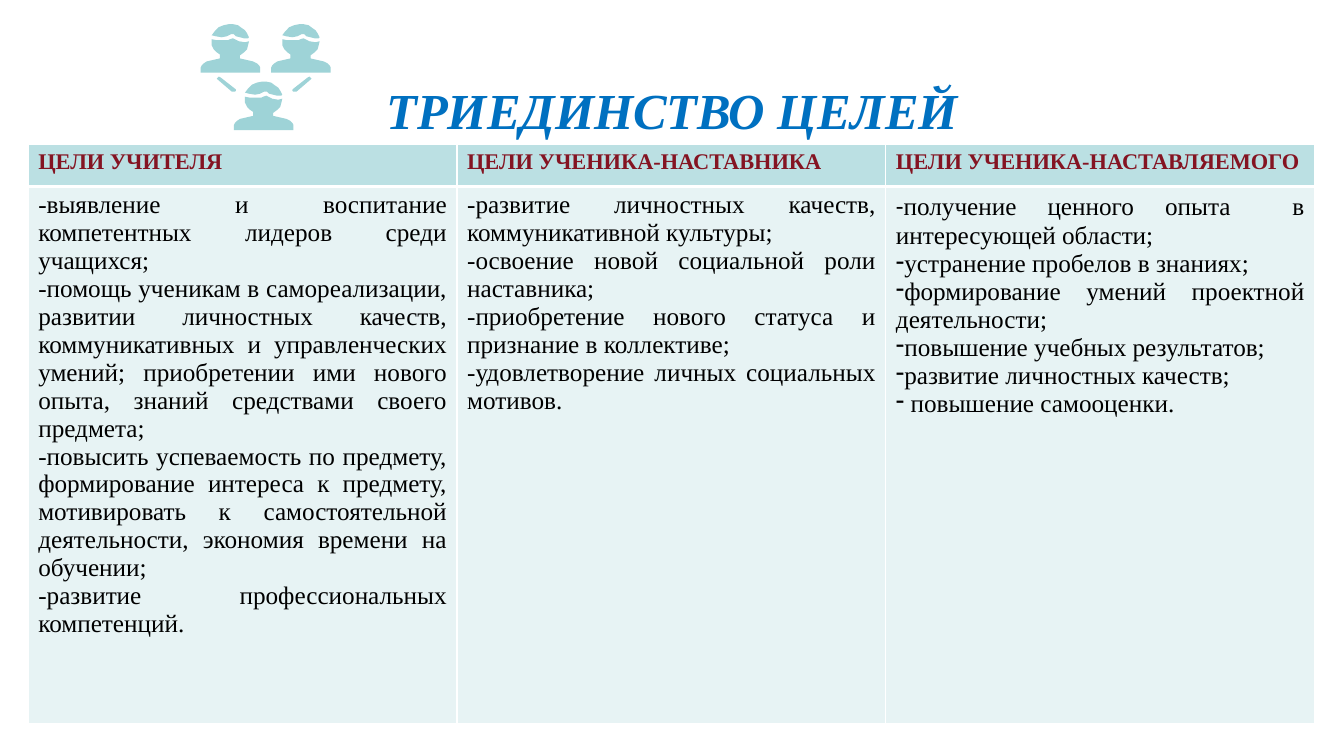
from lxml.etree import SubElement
from pptx import Presentation
from pptx.dml.color import RGBColor
from pptx.enum.text import MSO_ANCHOR, PP_ALIGN
from pptx.oxml.ns import qn
from pptx.util import Inches, Pt

TITLE = "ТРИЕДИНСТВО ЦЕЛЕЙ"
HEADS = ["ЦЕЛИ УЧИТЕЛЯ", "ЦЕЛИ УЧЕНИКА-НАСТАВНИКА", "ЦЕЛИ УЧЕНИКА-НАСТАВЛЯЕМОГО"]
GOALS = [
    [
        "-выявление и воспитание компетентных лидеров среди учащихся;",
        "-помощь ученикам в самореализации, развитии личностных качеств, "
        "коммуникативных и управленческих умений; приобретении ими нового "
        "опыта, знаний средствами своего предмета;",
        "-повысить успеваемость по предмету, формирование интереса к предмету, "
        "мотивировать к самостоятельной деятельности, экономия времени на обучении;",
        "-развитие профессиональных компетенций.",
    ],
    [
        "-развитие личностных качеств, коммуникативной культуры;",
        "-освоение новой социальной роли наставника;",
        "-приобретение нового статуса и признание в коллективе;",
        "-удовлетворение личных социальных мотивов.",
    ],
    [
        "получение ценного опыта  в интересующей области;",
        "устранение пробелов в знаниях;",
        "формирование умений проектной деятельности;",
        "повышение учебных результатов;",
        "развитие личностных качеств;",
        " повышение самооценки.",
    ],
]

BODY = [
    (2.58, 0.72), (2.58, 0.67), (2.57, 0.65), (2.55, 0.63), (2.51, 0.61),
    (2.38, 0.58), (2.38, 0.55), (2.42, 0.52), (2.45, 0.49), (2.46, 0.45),
    (2.47, 0.41), (2.43, 0.42), (2.37, 0.41), (2.33, 0.39), (2.31, 0.38),
    (2.28, 0.39), (2.26, 0.4), (2.2, 0.4), (2.15, 0.4), (2.1, 0.39),
    (2.1, 0.45), (2.12, 0.49), (2.15, 0.52), (2.18, 0.54), (2.18, 0.58),
    (2.05, 0.61), (2.02, 0.63), (2, 0.65), (1.99, 0.67), (1.99, 0.72),
]
HAIR = [
    (2.29, 0.34), (2.32, 0.34), (2.34, 0.36), (2.38, 0.37), (2.42, 0.38),
    (2.46, 0.38), (2.47, 0.37), (2.45, 0.33), (2.43, 0.3), (2.4, 0.28),
    (2.36, 0.25), (2.31, 0.24), (2.27, 0.24), (2.22, 0.25), (2.17, 0.27),
    (2.13, 0.31), (2.1, 0.35), (2.14, 0.36), (2.2, 0.37), (2.25, 0.36),
]
BAR = [
    (2.33, 0.91), (2.34, 0.9), (2.34, 0.89), (2.33, 0.88), (2.19, 0.77),
    (2.17, 0.76), (2.16, 0.77), (2.15, 0.78), (2.16, 0.79), (2.3, 0.91),
]
SPOTS = [(0, 0), (0.7, 0), (0.33, 0.57)]
AXIS = 2.62


def color(code):
    return RGBColor.from_string(code)


class Deck:
    face = "Times New Roman"
    white = "FFFFFF"
    teal = "9ED3D7"

    def __init__(self):
        self.file = Presentation()
        self.file.slide_width = Inches(13.33)
        self.file.slide_height = Inches(7.5)
        self.slide = self.file.slides.add_slide(self.file.slide_layouts[6])

    def style(self, font, size, code, bold=False, slant=False):
        font.name = self.face
        font.size = Pt(size)
        font.bold = bold
        font.italic = slant
        font.color.rgb = color(code)

    def title(self, text, left, top, width, height):
        frame = self.slide.shapes.add_textbox(
            Inches(left), Inches(top), Inches(width), Inches(height)).text_frame
        frame.word_wrap = True
        frame.vertical_anchor = MSO_ANCHOR.MIDDLE
        para = frame.paragraphs[0]
        para.text = text
        para.alignment = PP_ALIGN.CENTER
        para.line_spacing = 0.9
        self.style(para.font, 36, "0070C0", True, True)

    def border(self, cell, base):
        props = cell._tc.get_or_add_tcPr()
        for side, width in zip("LRTB", (1, 1, 1, base)):
            line = SubElement(props, qn("a:ln" + side), w=str(Pt(width)))
            fill = SubElement(line, qn("a:solidFill"))
            SubElement(fill, qn("a:srgbClr"), val=self.white)

    def paint(self, cell, code, base):
        self.border(cell, base)
        cell.fill.solid()
        cell.fill.fore_color.rgb = color(code)

    def bullet(self, para):
        props = para._p.get_or_add_pPr()
        props.set("marL", "0")
        props.set("indent", "0")
        SubElement(props, qn("a:buFontTx"))
        SubElement(props, qn("a:buChar"), char="-")

    def goals(self, cell, lines, dash):
        frame = cell.text_frame
        for row, text in enumerate(lines):
            para = frame.add_paragraph() if row else frame.paragraphs[0]
            para.alignment = PP_ALIGN.JUSTIFY
            self.style(para.font, 18, "000000")
            if dash and row == 0:
                mark = para.add_run()
                mark.text = "-"
                mark.font.name = "Calibri"
            elif dash:
                self.bullet(para)
            para.add_run().text = text

    def table(self, heads, lists, left, top, width, rows):
        grid = self.slide.shapes.add_table(
            len(rows), len(heads), Inches(left), Inches(top),
            Inches(width), Inches(sum(rows))).table
        grid.horz_banding = False
        for row, height in zip(grid.rows, rows):
            row.height = Inches(height)
        for col, (head, lines) in enumerate(zip(heads, lists)):
            grid.columns[col].width = Inches(width / len(heads))
            cell = grid.cell(0, col)
            cell.text = head
            self.style(cell.text_frame.paragraphs[0].font, 16, "841422", True)
            self.paint(cell, "BBE0E3", 3)
            cell = grid.cell(1, col)
            self.goals(cell, lines, col == 2)
            self.paint(cell, "E7F3F4", 1)

    def form(self, group, points):
        spots = [(Inches(x), Inches(y)) for x, y in points]
        pen = group.shapes.build_freeform(*spots[0])
        pen.add_line_segments(spots[1:], close=True)
        shape = pen.convert_to_shape()
        shape.shadow.inherit = False
        shape.fill.solid()
        shape.fill.fore_color.rgb = color(self.teal)
        shape.line.fill.background()

    def team(self):
        group = self.slide.shapes.add_group_shape()
        for right, down in SPOTS:
            for part in (BODY, HAIR):
                self.form(group, [(x + right, y + down) for x, y in part])
        self.form(group, BAR)
        self.form(group, [(2 * AXIS - x, y) for x, y in BAR])

    def save(self):
        self.file.save("out.pptx")


def main():
    deck = Deck()
    deck.title(TITLE, 0.92, 0.4, 11.5, 1.45)
    deck.table(HEADS, GOALS, 0.28, 1.43, 12.76, [0.42, 5.33])
    deck.team()
    deck.save()


if __name__ == "__main__":
    main()
